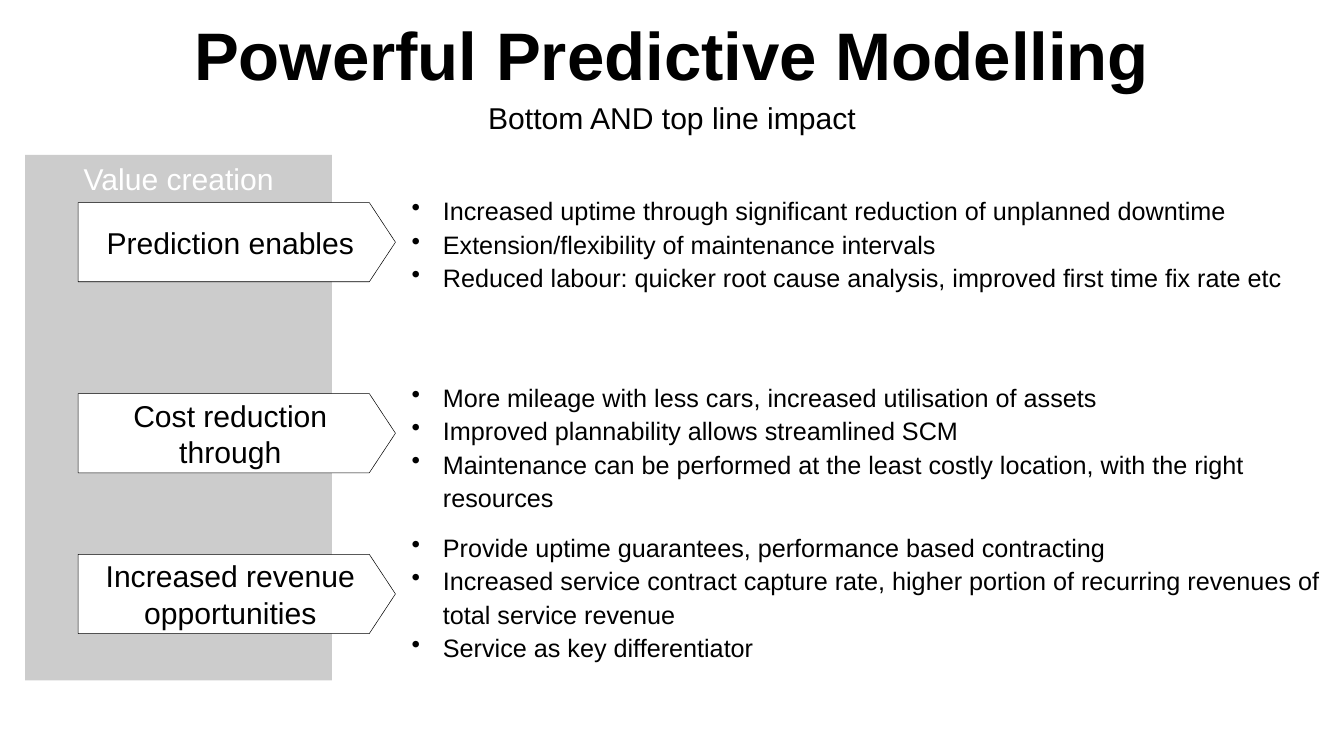
"""Builds the predictive modelling value slide."""
import dataclasses

import pptx
import pptx.dml.color
import pptx.enum.shapes
import pptx.enum.text
import pptx.oxml.ns
import pptx.util
from lxml import etree

ALIGN = pptx.enum.text.PP_ALIGN
ANCHOR = pptx.enum.text.MSO_ANCHOR
SHAPE = pptx.enum.shapes.MSO_SHAPE


@dataclasses.dataclass(frozen=True)
class Theme:
    """Colours, type sizes and spacing of the slide."""
    font: str = "Arial"
    ink: str = "000000"
    paper: str = "FFFFFF"
    panel: str = "CCCCCC"
    title: float = 96
    label: float = 43
    body: float = 36
    leading: float = 47.6
    hairline: float = 0.75
    indent: float = 0.62


@dataclasses.dataclass(frozen=True)
class Box:
    """A rectangle in inches, divided into 100 columns and 100 rows."""
    left: float
    top: float
    width: float
    height: float

    def area(self, column, row, columns, rows):
        """Return the box covering the given columns and rows."""
        return Box(self.left + self.width * column / 100,
                   self.top + self.height * row / 100,
                   self.width * columns / 100,
                   self.height * rows / 100)

    def place(self):
        """Return left, top, width and height as lengths."""
        return [pptx.util.Inches(side) for side in dataclasses.astuple(self)]


THEME = Theme()
PAGE = Box(0, 0, 26.67, 15)
VALUE_GROUPS = [
    ("Prediction enables", 9.11, 0, [
        "Increased uptime through significant reduction of unplanned downtime",
        "Extension/flexibility of maintenance intervals",
        "Reduced labour: quicker root cause analysis, improved first time fix rate etc",
    ]),
    ("Cost reduction through", 45.45, 123.8, [
        "More mileage with less cars, increased utilisation of assets",
        "Improved plannability allows streamlined SCM",
        "Maintenance can be performed at the least costly location, with the right resources",
    ]),
    ("Increased revenue opportunities", 76.03, 24, [
        "Provide uptime guarantees, performance based contracting",
        "Increased service contract capture rate, higher portion of recurring revenues"
        " of total service revenue",
        "Service as key differentiator",
    ]),
]


def write(paragraph, text, size=THEME.label, color=THEME.ink, bold=False,
          align=ALIGN.CENTER, spacing=None, before=0, bullet=False):
    """Write one formatted paragraph."""
    if bullet:
        properties = paragraph._p.get_or_add_pPr()
        indent = pptx.util.Inches(THEME.indent)
        properties.set("marL", str(indent))
        properties.set("indent", str(-indent))
        mark = etree.SubElement(properties, pptx.oxml.ns.qn("a:buChar"))
        mark.set("char", "•")
    paragraph.text = text
    paragraph.alignment = align
    paragraph.space_before = pptx.util.Pt(before)
    if spacing:
        paragraph.line_spacing = spacing
    paragraph.font.name = THEME.font
    paragraph.font.size = pptx.util.Pt(size)
    paragraph.font.bold = bold
    paragraph.font.color.rgb = pptx.dml.color.RGBColor.from_string(color)


def set_frame(shape, across, down, anchor=ANCHOR.TOP):
    """Set the insets and anchor of a shape and return its text frame."""
    frame = shape.text_frame
    frame.word_wrap = True
    frame.auto_size = pptx.enum.text.MSO_AUTO_SIZE.NONE
    frame.vertical_anchor = anchor
    frame.margin_left = frame.margin_right = pptx.util.Inches(across)
    frame.margin_top = frame.margin_bottom = pptx.util.Inches(down)
    return frame


def add_label(slide, box, kind, text, fill, color, anchor, outline=None):
    """Add a filled preset shape with a centred label."""
    shape = slide.shapes.add_shape(kind, *box.place())
    shape.shadow.inherit = False
    shape.fill.solid()
    shape.fill.fore_color.rgb = pptx.dml.color.RGBColor.from_string(fill)
    if outline:
        shape.line.color.rgb = pptx.dml.color.RGBColor.from_string(outline)
        shape.line.width = pptx.util.Pt(THEME.hairline)
    else:
        shape.line.fill.background()
    write(set_frame(shape, 0.24, 0.12, anchor).paragraphs[0], text, color=color)
    return shape


def add_heading(slide, box):
    """Place the title and the subtitle under it."""
    title = slide.shapes.title
    title.left, title.top, title.width, title.height = box.area(0, 0, 100, 56.67).place()
    write(set_frame(title, 0.04, 0.04, ANCHOR.BOTTOM).paragraphs[0],
          "Powerful Predictive Modelling", size=THEME.title, bold=True)
    subtitle = slide.shapes.add_textbox(*box.area(0, 61.85, 100, 38.15).place())
    write(set_frame(subtitle, 0.04, 0.04).paragraphs[0],
          "Bottom AND top line impact", spacing=0.85)


def add_value_panel(slide, box):
    """Draw the grey panel and the arrow labels that reach out of it."""
    add_label(slide, box, SHAPE.RECTANGLE, "Value creation",
              THEME.panel, THEME.paper, ANCHOR.TOP)
    for name, row, _, _ in VALUE_GROUPS:
        arrow = add_label(slide, box.area(17.24, row, 103.45, 15.05), SHAPE.PENTAGON,
                          name, THEME.paper, THEME.ink, ANCHOR.MIDDLE, THEME.ink)
        arrow.adjustments[0] = 0.33


def add_benefits(slide, box):
    """List the benefits of every value group in one text box."""
    frame = set_frame(slide.shapes.add_textbox(*box.place()), 0, 0)
    paragraph = frame.paragraphs[0]
    for _, _, gap, benefits in VALUE_GROUPS:
        for position, benefit in enumerate(benefits):
            if paragraph.text:
                paragraph = frame.add_paragraph()
            write(paragraph, benefit, size=THEME.body, align=ALIGN.LEFT,
                  spacing=pptx.util.Pt(THEME.leading),
                  before=0 if position else gap, bullet=True)


def main():
    """Build and save the slide."""
    deck = pptx.Presentation()
    deck.slide_width = pptx.util.Inches(PAGE.width)
    deck.slide_height = pptx.util.Inches(PAGE.height)
    slide = deck.slides.add_slide(deck.slide_layouts.get_by_name("Title Only"))
    add_heading(slide, PAGE.area(5, 2.53, 90, 18))
    add_benefits(slide, PAGE.area(30.63, 25.47, 69.37, 64.53))
    add_value_panel(slide, PAGE.area(1.87, 20.47, 22.83, 69.53))
    deck.save("out.pptx")


if __name__ == "__main__":
    main()
